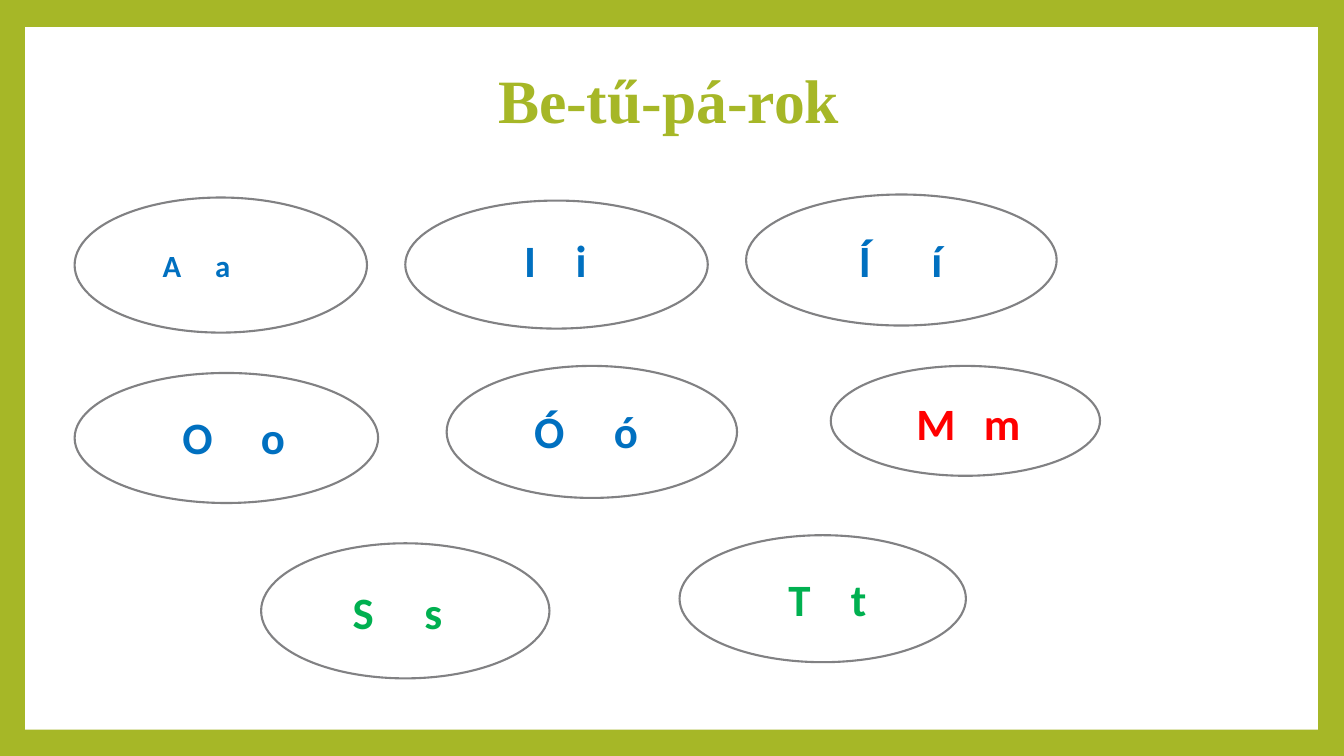
from lxml.etree import SubElement
from pptx import Presentation
from pptx.dml.color import RGBColor
from pptx.enum.shapes import MSO_SHAPE
from pptx.enum.text import MSO_ANCHOR, MSO_AUTO_SIZE, PP_ALIGN
from pptx.oxml.ns import qn
from pptx.util import Inches, Pt

COLORS = {"green": "A6B727", "white": "FFFFFF", "outline": "818183",
          "vowel": "0070C0", "m": "FF0000", "consonant": "00B050"}


def add_panel(preset, box):
    panel = slide.shapes.add_shape(preset, *map(Inches, box))
    panel.shadow.inherit = False
    panel.fill.solid()
    panel.fill.fore_color.rgb = RGBColor.from_string(COLORS["white"])
    return panel


def write_text(frame, text, color, size, font, tab=None):
    frame.word_wrap = True
    paragraph = frame.paragraphs[0]
    paragraph.alignment = PP_ALIGN.LEFT
    if tab:
        stops = SubElement(paragraph._p.get_or_add_pPr(), qn("a:tabLst"))
        SubElement(stops, qn("a:tab"), pos=str(Inches(tab)), algn="l")
    run = paragraph.add_run()
    run.text = text
    for name, value in {"size": Pt(size), "name": font, "bold": True}.items():
        setattr(run.font, name, value)
    run.font.color.rgb = RGBColor.from_string(COLORS[color])


prs = Presentation()
prs.slide_width, prs.slide_height = Inches(13.33), Inches(7.5)
slide = prs.slides.add_slide(prs.slide_layouts[5])

# Green frame around a white page
slide.background.fill.solid()
slide.background.fill.fore_color.rgb = RGBColor.from_string(COLORS["green"])
page = add_panel(MSO_SHAPE.RECTANGLE, (0.25, 0.27, 12.82, 6.97))
page.line.fill.background()

# Title, moved in front of the page
title = slide.shapes.title
page._element.addnext(title._element)
title.left, title.top, title.width, title.height = map(Inches, (1.34, 0.29, 10.8, 1.48))
title_frame = title.text_frame
title_frame.auto_size = MSO_AUTO_SIZE.NONE
title_frame.vertical_anchor = MSO_ANCHOR.MIDDLE
title_frame.margin_left = Inches(3.6)
title_frame.paragraphs[0].line_spacing = 0.9
write_text(title_frame, "Be-tű-pá-rok", "green", 44, "Times New Roman")

# Letter pairs: capital, small, colour, ellipse box, label (left, top, width), tab stop
letter_pairs = [
    ("A", "a", "vowel", (0.74, 1.96, 2.9, 1.34), None, 0.52),
    ("I", "i", "vowel", (4.02, 1.99, 3, 1.27), (5.1, 2.26, 0.92), 0.51),
    ("Í", "í", "vowel", (7.4, 1.93, 3.08, 1.3), (8.42, 2.26, 1.98), 0.72),
    ("O", "o", "vowel", (0.74, 3.7, 3.01, 1.29), (1.71, 4.02, 2.02), 0.78),
    ("Ó", "ó", "vowel", (4.43, 3.63, 2.88, 1.31), (5.2, 3.96, 1.82), 0.79),
    ("M", "m", "m", (8.24, 3.63, 2.67, 1.09), (8.99, 3.88, 1.41), 0.67),
    ("S", "s", "consonant", (2.59, 5.39, 2.86, 1.34), (3.4, 5.75, 1.9), 0.71),
    ("T", "t", "consonant", (6.74, 5.31, 2.84, 1.26), (7.72, 5.62, 1.55), 0.62),
]
for capital, small, color, ellipse_box, label_box, tab in letter_pairs:
    ellipse = add_panel(MSO_SHAPE.OVAL, ellipse_box)
    ellipse.line.color.rgb = RGBColor.from_string(COLORS["outline"])
    ellipse.line.width = Pt(1.5)
    if label_box:
        label = slide.shapes.add_textbox(*map(Inches, (*label_box, 0.64)))
        frame, size = label.text_frame, 32
    else:
        frame, size = ellipse.text_frame, 22
        frame.margin_left = Inches(0.45)
        frame.vertical_anchor = MSO_ANCHOR.MIDDLE
    write_text(frame, f"{capital}\t{small}", color, size, "Calibri", tab)

prs.save("out.pptx")
